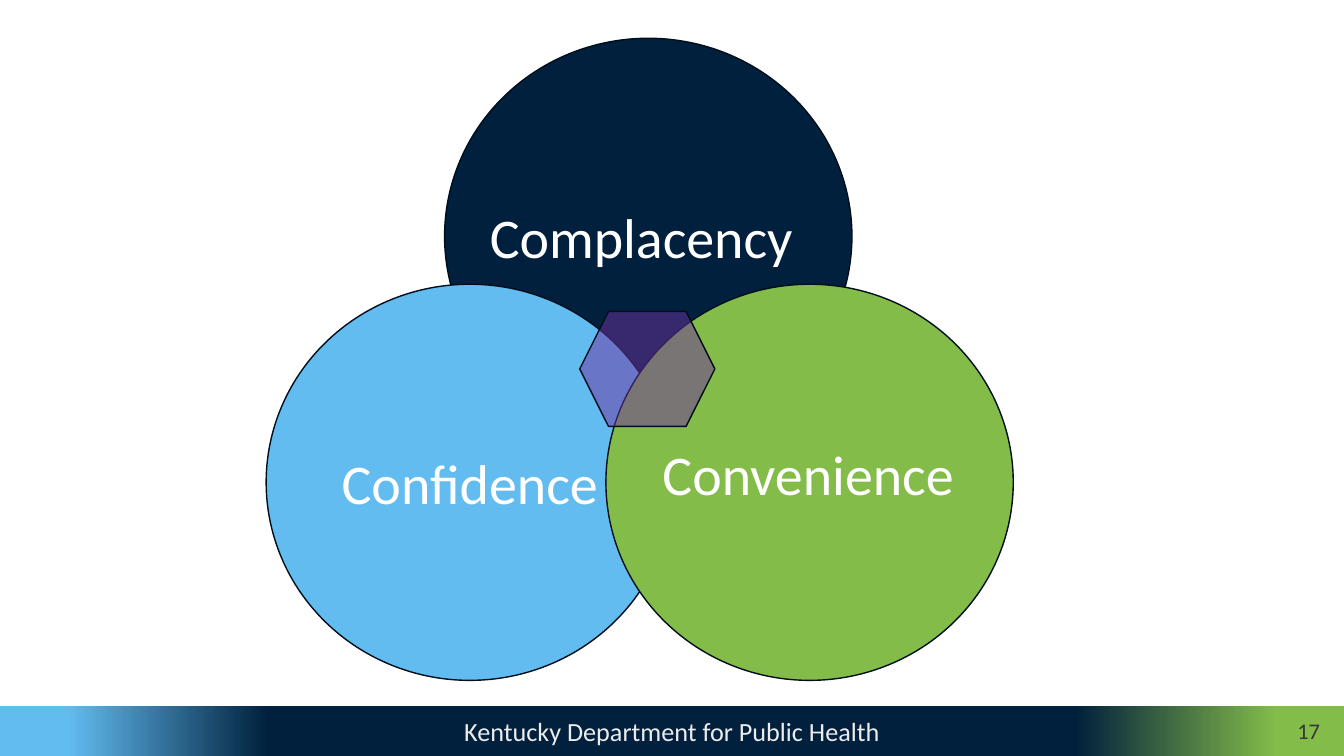
from lxml.etree import SubElement
from pptx import Presentation
from pptx.dml.color import RGBColor
from pptx.enum.shapes import MSO_SHAPE as Preset
from pptx.enum.text import MSO_ANCHOR as Anchor, PP_ALIGN as Align
from pptx.oxml.ns import qn
from pptx.util import Inches, Pt

NAVY, SKY, GREEN, PURPLE = "01203D", "62BCF0", "84BC49", "7030A0"
OUTLINE, WHITE = "000E1B", "FFFFFF"
CIRCLE_SIZE = (4.04, 3.93)


def rgb(value):
    return RGBColor.from_string(value)


def set_values(target, values):
    for name, value in values.items():
        setattr(target, name, value)


def add_preset(shapes, preset, box, fill=None, outline=None):
    shape = shapes.add_shape(preset, *map(Inches, box))
    shape.shadow.inherit = False
    if fill:
        shape.fill.solid()
        shape.fill.fore_color.rgb = rgb(fill)
    if outline:
        shape.line.color.rgb = rgb(outline)
        shape.line.width = Pt(1)
    else:
        shape.line.fill.background()
    return shape


def write(shape, text, size, color, align, anchor=Anchor.TOP):
    frame = shape.text_frame
    set_values(frame, {"word_wrap": True, "vertical_anchor": anchor})
    paragraph = frame.paragraphs[0]
    set_values(paragraph, {"text": text, "alignment": align})
    set_values(paragraph.font, {"size": Pt(size), "name": "Calibri"})
    paragraph.font.color.rgb = rgb(color)


def set_gradient(shape, stops):
    shape.fill.gradient()
    shape.fill.gradient_angle = 0
    stop_list = shape.fill._fill._gradFill.find(qn("a:gsLst"))
    for stop in list(stop_list):
        stop_list.remove(stop)
    for percent, color in stops:
        stop = SubElement(stop_list, qn("a:gs"), pos=str(percent * 1000))
        SubElement(stop, qn("a:srgbClr"), val=color)


def set_opacity(shape, percent):
    color = shape.fill._xPr.find(qn("a:solidFill"))[0]
    SubElement(color, qn("a:alpha"), val=str(percent * 1000))


def add_text(shapes, box, *style):
    write(shapes.add_textbox(*map(Inches, box)), *style)


def add_footer(shapes):
    band = add_preset(shapes, Preset.RECTANGLE, (0, 7, 13.33, 0.5))
    set_gradient(band, [(5, SKY), (20, NAVY), (80, NAVY), (95, GREEN)])
    write(band, "Kentucky Department for Public Health", 18.7, "ECECEC",
          Align.CENTER, Anchor.MIDDLE)


def add_factors(shapes):
    factors = [
        ("Complacency", NAVY, (4.41, 0.38), (4.76, 1.96, 3.33, 0.77), Align.LEFT),
        ("Confidence", SKY, (2.64, 2.82), (2.96, 4.4, 3.4, 0.77), Align.CENTER),
        ("Convenience", GREEN, (6.01, 2.82), (6.42, 4.31, 3.19, 0.77), Align.CENTER),
    ]
    for factor, color, corner, label_box, align in factors:
        add_preset(shapes, Preset.OVAL, corner + CIRCLE_SIZE, color, OUTLINE)
        if align == Align.LEFT:
            add_text(shapes, label_box, factor, 40, WHITE, align)
        else:
            label = add_preset(shapes, Preset.RECTANGLE, label_box, color)
            write(label, factor, 40, WHITE, align)
    overlap = add_preset(shapes, Preset.HEXAGON, (5.75, 3.09, 1.34, 1.14),
                         PURPLE, OUTLINE)
    set_opacity(overlap, 50)


def main():
    deck = Presentation()
    set_values(deck, {"slide_width": Inches(13.33), "slide_height": Inches(7.5)})
    slide = deck.slides.add_slide(deck.slide_layouts[6])
    add_footer(slide.shapes)
    add_factors(slide.shapes.add_group_shape().shapes)
    add_text(slide.shapes, (12.43, 7.11, 0.76, 0.28), "17", 16, "363636",
             Align.RIGHT, Anchor.MIDDLE)
    deck.save("out.pptx")


if __name__ == "__main__":
    main()
